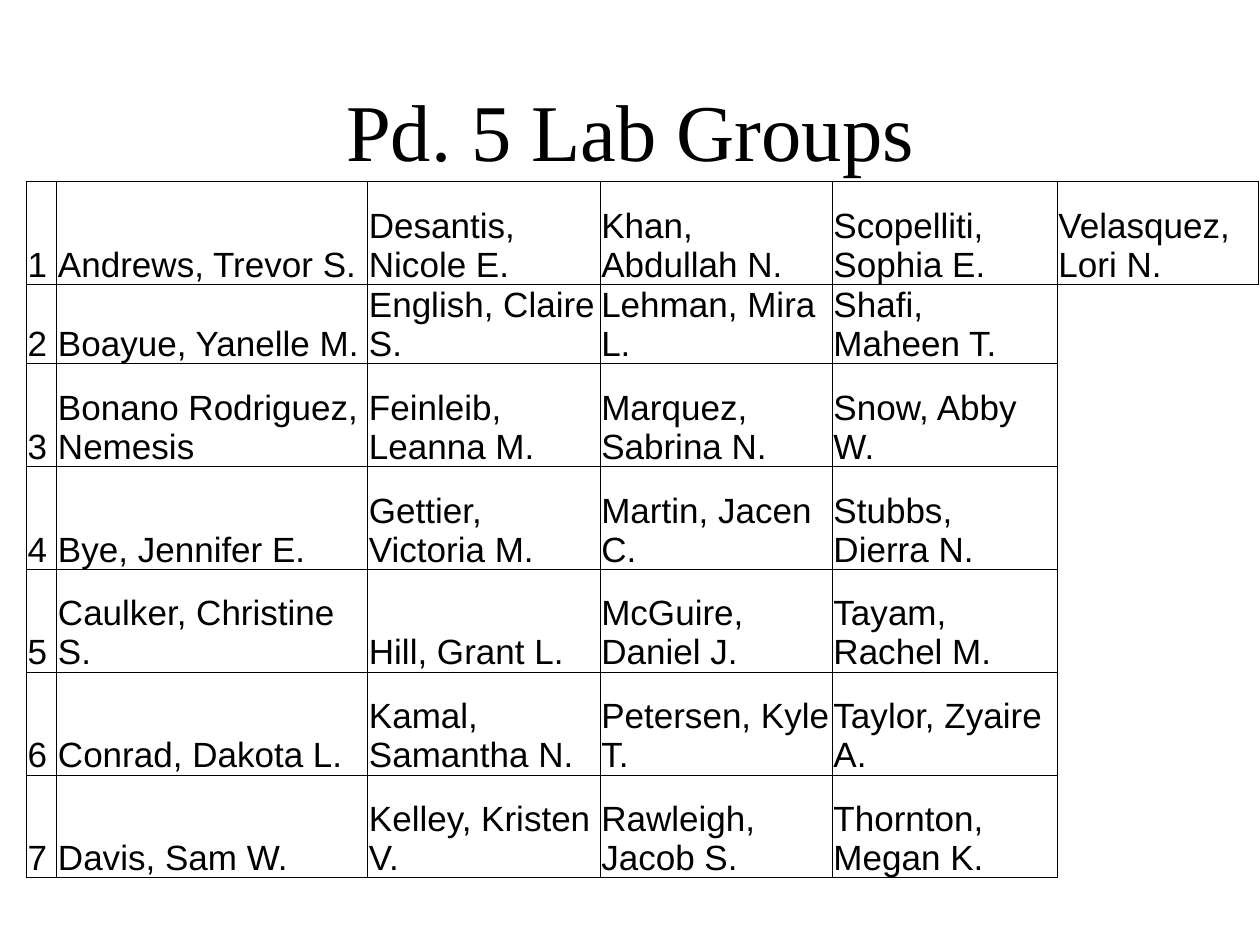
from dataclasses import dataclass

from lxml.etree import SubElement
from pptx import Presentation
from pptx.dml.color import RGBColor
from pptx.enum.text import MSO_ANCHOR, MSO_AUTO_SIZE, PP_ALIGN
from pptx.oxml.ns import qn
from pptx.util import Pt

BLACK = RGBColor(0, 0, 0)
COLS = (17.3, 177.7, 132.8, 132.7, 128.6, 115.2)
TALL, SHORT = 58.75, 40.3


@dataclass
class Group:
    names: tuple[str, ...]
    height: float = TALL


GROUPS = [
    Group(("Andrews, Trevor S.", "Desantis, Nicole E.", "Khan, Abdullah N.",
           "Scopelliti, Sophia E.", "Velasquez, Lori N.")),
    Group(("Boayue, Yanelle M.", "English, Claire S.", "Lehman, Mira L.",
           "Shafi, Maheen T."), SHORT),
    Group(("Bonano Rodriguez, Nemesis", "Feinleib, Leanna M.",
           "Marquez, Sabrina N.", "Snow, Abby W.")),
    Group(("Bye, Jennifer E.", "Gettier, Victoria M.", "Martin, Jacen C.",
           "Stubbs, Dierra N.")),
    Group(("Caulker, Christine S.", "Hill, Grant L.", "McGuire, Daniel J.",
           "Tayam, Rachel M.")),
    Group(("Conrad, Dakota L.", "Kamal, Samantha N.", "Petersen, Kyle T.",
           "Taylor, Zyaire A.")),
    Group(("Davis, Sam W.", "Kelley, Kristen V.", "Rawleigh, Jacob S.",
           "Thornton, Megan K.")),
]


def add_run(para, text: str, font: str, size: float) -> None:
    run = para.add_run()
    run.text = text
    run.font.name = font
    run.font.size = Pt(size)
    run.font.color.rgb = BLACK


def set_edges(cell, shown: str) -> None:
    """Rule the sides named in shown and clear the others."""
    props = cell._tc.get_or_add_tcPr()
    for side in "LRTB":
        line = SubElement(props, qn(f"a:ln{side}"), w=str(Pt(0.5)))
        if side in shown:
            fill = SubElement(line, qn("a:solidFill"))
            SubElement(fill, qn("a:srgbClr"), val=str(BLACK))
        else:
            SubElement(line, qn("a:noFill"))
    cell.fill.background()


def fill_cell(cell, text: str) -> None:
    cell.vertical_anchor = MSO_ANCHOR.BOTTOM
    cell.margin_left = cell.margin_right = cell.margin_top = Pt(0.75)
    cell.margin_bottom = Pt(0)
    add_run(cell.text_frame.paragraphs[0], text, "Arial", 20)


def add_groups(slide, groups: list[Group]) -> None:
    frame = slide.shapes.add_table(
        len(groups), len(COLS), Pt(15.1), Pt(103.8), Pt(sum(COLS)),
        Pt(sum(group.height for group in groups)))
    table = frame.table
    table.first_row = table.horz_banding = False
    for col, width in zip(table.columns, COLS):
        col.width = Pt(width)
    for r, group in enumerate(groups):
        table.rows[r].height = Pt(group.height)
        texts = (str(r + 1), *group.names)
        for c in range(len(COLS)):
            cell = table.cell(r, c)
            if c < len(texts):
                set_edges(cell, "LRTB")
                fill_cell(cell, texts[c])
            else:
                # An open seat keeps only the lines of its neighbours
                above = len(groups[r - 1].names) >= c
                set_edges(cell, "LT" if above else "L")


def main() -> None:
    deck = Presentation()
    deck.slide_width, deck.slide_height = Pt(720), Pt(540)
    slide = deck.slides.add_slide(deck.slide_layouts[5])

    # Title
    title = slide.shapes.title
    title.left, title.top = Pt(72), Pt(39.6)
    title.width, title.height = Pt(576), Pt(68.4)
    text = title.text_frame
    text.auto_size = MSO_AUTO_SIZE.NONE
    text.vertical_anchor = MSO_ANCHOR.MIDDLE
    para = text.paragraphs[0]
    para.alignment = PP_ALIGN.CENTER
    add_run(para, "Pd. 5 Lab Groups", "Times New Roman", 46)

    # Lab groups, one a row
    add_groups(slide, GROUPS)
    deck.save("out.pptx")


if __name__ == "__main__":
    main()
